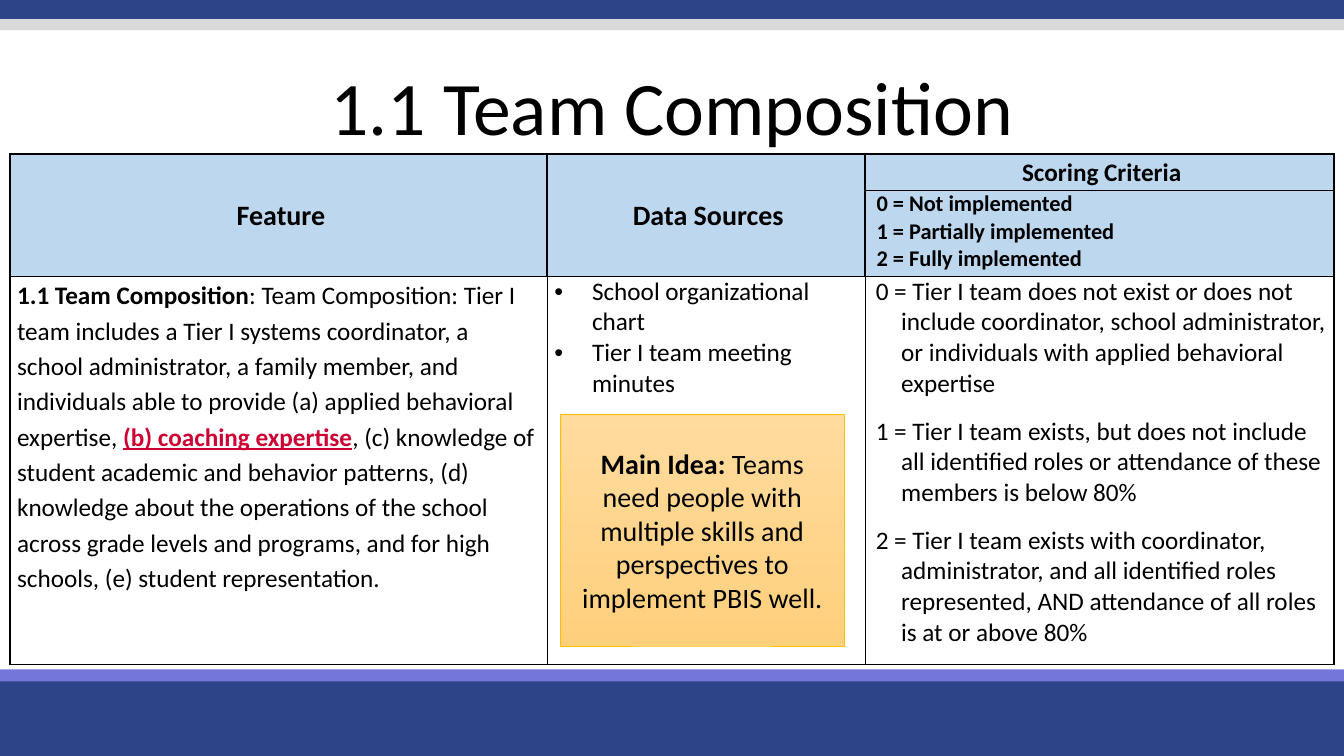
from pptx import Presentation
from pptx.dml.color import RGBColor
from pptx.enum.shapes import MSO_SHAPE
from pptx.enum.text import MSO_ANCHOR, PP_ALIGN
from pptx.oxml import parse_xml
from pptx.oxml.ns import nsdecls
from pptx.util import Cm, Pt

RECT = MSO_SHAPE.RECTANGLE
MID, TOP = MSO_ANCHOR.MIDDLE, MSO_ANCHOR.TOP
MIDDLE, LEFT = PP_ALIGN.CENTER, PP_ALIGN.LEFT


def color(code):
    return RGBColor.from_string(code)


def write(frame, lines, size, align=LEFT, hang=None, bullet=False):
    for i, runs in enumerate(lines):
        para = frame.paragraphs[0] if i == 0 else frame.add_paragraph()
        para.alignment = align
        if hang:
            props = para._p.get_or_add_pPr()
            props.set("marL", str(Cm(hang[0])))
            props.set("indent", str(Cm(hang[1])))
            if bullet:
                props.append(parse_xml(f'<a:buFont {nsdecls("a")} typeface="Arial"/>'))
                props.append(parse_xml(f'<a:buChar {nsdecls("a")} char="•"/>'))
        for text, bold, code in runs:
            run = para.add_run()
            run.text = text
            run.font.name = "Calibri"
            run.font.size = Pt(size)
            run.font.bold = bold
            run.font.color.rgb = color(code)
            run.font.underline = code == "CC0033"


deck = Presentation()
deck.slide_width, deck.slide_height = Cm(33.87), Cm(19.05)
slide = deck.slides.add_slide(deck.slide_layouts[6])
shapes = slide.shapes

bands = [
    (17.02, 2.03, "2E4488"),
    (16.87, 0.3, "7476DA"),
    (-0.08, 0.56, "2E4488"),
    (0.48, 0.28, "D9D9D9"),
]
for top, height, code in bands:
    band = shapes.add_shape(RECT, 0, Cm(top), deck.slide_width, Cm(height))
    band.shadow.inherit = False
    band.fill.solid()
    band.fill.fore_color.rgb = color(code)
    band.line.fill.background()

title = shapes.add_textbox(0, Cm(1.68), deck.slide_width, Cm(2.21)).text_frame
title.word_wrap = True
title.vertical_anchor = MID
write(title, [[("1.1 Team Composition", False, "000000")]], 54, MIDDLE)
title.paragraphs[0].line_spacing = 0.9

grids = []
specs = [
    (3.89, [13.54, 8, 11.83], [0.91, 2.17], "BDD7EE", 1.5),
    (6.96, [13.54, 8.03, 11.8], [9.78], "FFFFFF", 1),
]
for top, widths, heights, code, weight in specs:
    grid = shapes.add_table(len(heights), 3, Cm(0.25), Cm(top),
                            Cm(sum(widths)), Cm(sum(heights))).table
    grid.first_row = grid.horz_banding = False
    for col, width in zip(grid.columns, widths):
        col.width = Cm(width)
    for row, height in zip(grid.rows, heights):
        row.height = Cm(height)
    for cell in grid.iter_cells():
        cell.margin_left = cell.margin_right = Cm(0.18)
        cell.margin_top = cell.margin_bottom = 0
        for side in "LRTB":
            cell._tc.get_or_add_tcPr().append(parse_xml(
                f'<a:ln{side} {nsdecls("a")} w="{Pt(weight)}"><a:solidFill>'
                f'<a:srgbClr val="000000"/></a:solidFill></a:ln{side}>'))
        cell.fill.solid()
        cell.fill.fore_color.rgb = color(code)
    grids.append(grid)
head, body = grids

for i in range(2):
    head.cell(0, i).merge(head.cell(1, i))
hang = (0.91, -0.79)
for i, (text, size) in enumerate([("Feature", 20), ("Data Sources", 20), ("Scoring Criteria", 18)]):
    cell = head.cell(0, i)
    cell.vertical_anchor = MID
    write(cell.text_frame, [[(text, True, "000000")]], size, MIDDLE, hang)
scale = ["0 = Not implemented", "1 = Partially implemented", "2 = Fully implemented"]
write(head.cell(1, 2).text_frame, [[(text, True, "000000")] for text in scale], 16, hang=hang)

feature = [
    ("1.1 Team Composition", True, "000000"),
    (": Team Composition: Tier I team includes a Tier I systems coordinator, a school "
     "administrator, a family member, and individuals able to provide (a) applied "
     "behavioral expertise, ", False, "000000"),
    ("(b) coaching expertise", True, "CC0033"),
    (", (c) knowledge of student academic and behavior patterns, (d) knowledge about the "
     "operations of the school across grade levels and programs, and for high schools, "
     "(e) student representation.", False, "000000"),
]
frame = body.cell(0, 0).text_frame
write(frame, [feature], 18)
frame.paragraphs[0].line_spacing = 1.15

sources = ["School organizational chart", "Tier I team meeting minutes"]
write(body.cell(0, 1).text_frame, [[(text, False, "000000")] for text in sources], 18,
      hang=(0.95, -0.95), bullet=True)

scores = [
    "0 = Tier I team does not exist or does not include coordinator, school administrator, "
    "or individuals with applied behavioral expertise",
    "1 = Tier I team exists, but does not include all identified roles or attendance of "
    "these members is below 80%",
    "2 = Tier I team exists with coordinator, administrator, and all identified roles "
    "represented, AND attendance of all roles is at or above 80%",
]
frame = body.cell(0, 2).text_frame
write(frame, [[(text, False, "000000")] for text in scores], 18, hang=(0.71, -0.64))
for para in frame.paragraphs:
    para.space_after = Pt(12)

idea = shapes.add_shape(RECT, Cm(14.12), Cm(10.44), Cm(7.16), Cm(5.84))
idea.shadow.inherit = False
idea.fill.gradient()
idea.fill.gradient_angle = 270
for stop, code, place in zip(idea.fill.gradient_stops, ["FFDB9E", "FFD07C"], [0, 1]):
    stop.color.rgb = color(code)
    stop.position = place
idea.line.color.rgb = color("FFC000")
idea.line.width = Pt(0.5)
idea.text_frame.word_wrap = True
idea.text_frame.vertical_anchor = MID
write(idea.text_frame, [[
    ("Main Idea: ", True, "000000"),
    ("Teams need people with multiple skills and perspectives to implement PBIS well.",
     False, "000000"),
]], 20, MIDDLE)

deck.save("out.pptx")
